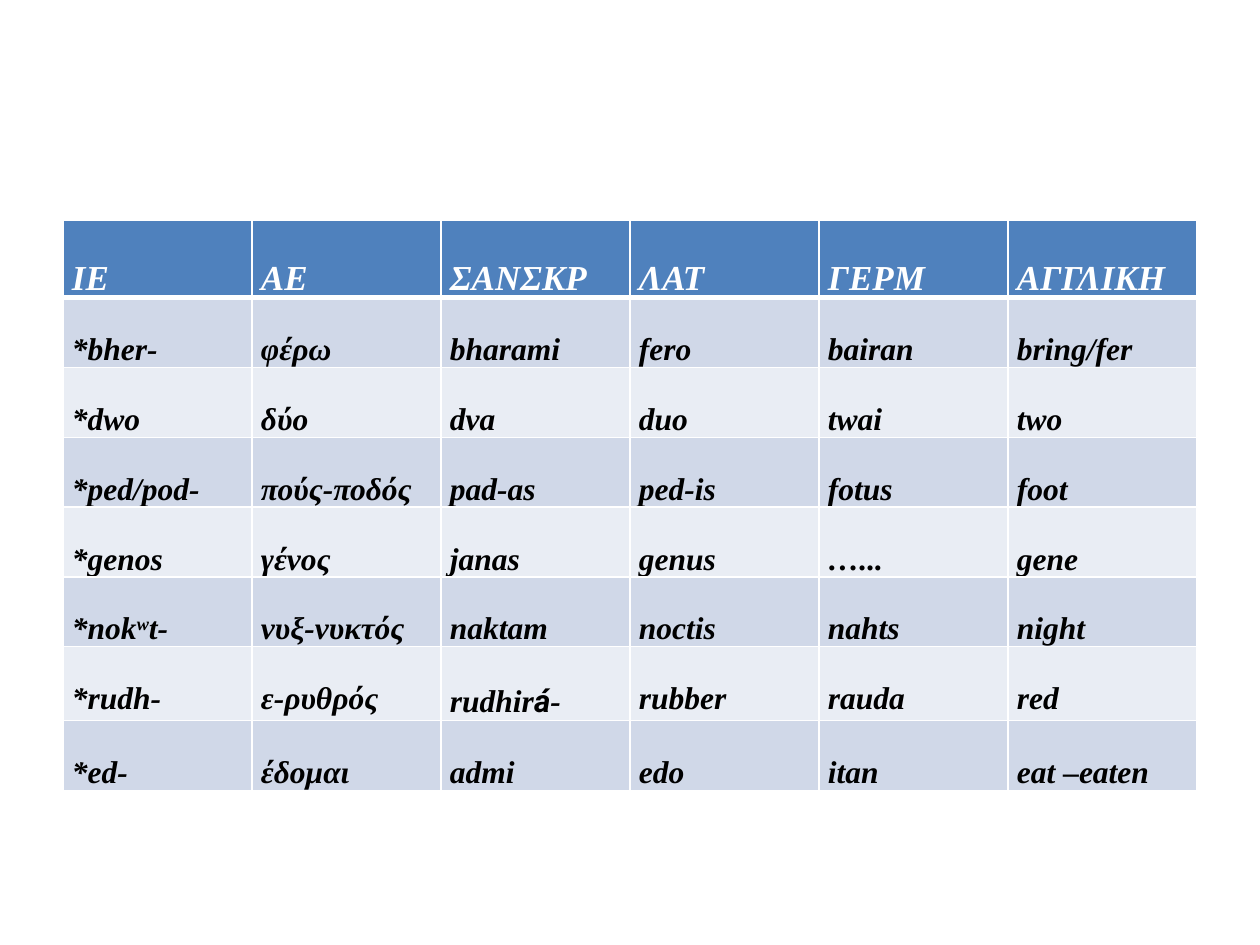
from lxml import etree
from pptx import Presentation
from pptx import util as u
from pptx.dml.color import RGBColor
from pptx.enum import text
from pptx.oxml.ns import qn

PX = 914400 / 126
WHITE = RGBColor(0xFF, 0xFF, 0xFF)
BLACK = RGBColor(0, 0, 0)
BLUE = RGBColor(0x4F, 0x81, 0xBD)
BANDS = RGBColor(0xD0, 0xD8, 0xE8), RGBColor(0xE9, 0xED, 0xF4)
SERIF = "Times New Roman"

# A tuple holds the runs of a cell whose middle run is set apart.
ROOTS = [
    ["ΙΕ", "ΑΕ", "ΣΑΝΣΚΡ", "ΛΑΤ", "ΓΕΡΜ", "ΑΓΓΛΙΚΗ"],
    ["*bher-", "φέρω", "bharami", "fero", "bairan", "bring/fer"],
    ["*dwo", "δύο", "dva", "duo", "twai", "two"],
    ["*ped/pod-", "πούς-ποδός", "pad-as", "ped-is", "fotus", "foot"],
    ["*genos", "γένος", "janas", "genus", "…...", "gene"],
    [("*nok", "w", "t-"), "νυξ-νυκτός", "naktam", "noctis", "nahts", "night"],
    ["*rudh-", "ε-ρυθρός ", ("rudhir", "á", "-"), "rubber", "rauda", "red"],
    ["*ed-", "έδομαι", "admi", "edo", "itan", "eat –eaten"],
]


def px(n):
    return u.Emu(round(n * PX))


def rule(cell, side, width):
    """Draw one white border of a cell, with its width in points."""
    line = etree.SubElement(cell._tc.get_or_add_tcPr(), qn("a:ln" + side),
                            w=str(u.Pt(width)))
    fill = etree.SubElement(line, qn("a:solidFill"))
    etree.SubElement(fill, qn("a:srgbClr"), val=str(WHITE))


def write(cell, words, size, color):
    cell.margin_left = cell.margin_right = px(9)
    cell.margin_top = cell.margin_bottom = 0
    para = cell.text_frame.paragraphs[0]
    para.alignment = text.PP_ALIGN.JUSTIFY
    para.line_spacing = 2.0
    for part in words if isinstance(words, tuple) else (words,):
        run = para.add_run()
        run.text = part
        font = run.font
        font.name = "Roboto" if part == "á" else SERIF
        font.size = u.Pt(size)
        font.bold = font.italic = True
        font.color.rgb = color
        if part == "w":
            font._element.set("baseline", "30000")


def root_table(slide, left, top, width, height):
    rows, cols = len(ROOTS), len(ROOTS[0])
    grid = slide.shapes.add_table(rows, cols, px(left), px(top),
                                  px(width), px(height)).table
    for r, row in enumerate(ROOTS):
        head = r == 0
        for c, words in enumerate(row):
            cell = grid.cell(r, c)
            write(cell, words, 20 if head else 18, WHITE if head else BLACK)
            for side in "LRTB":
                thick = (head and side == "B") or (r == 1 and side == "T")
                rule(cell, side, 3 if thick else 1)
            cell.fill.solid()
            cell.fill.fore_color.rgb = BLUE if head else BANDS[(r - 1) % 2]


def main():
    deck = Presentation()
    deck.slide_width, deck.slide_height = px(1260), px(945)
    slide = deck.slides.add_slide(deck.slide_layouts[6])
    root_table(slide, 63, 220, 1134, 416)
    deck.save("out.pptx")


if __name__ == "__main__":
    main()
